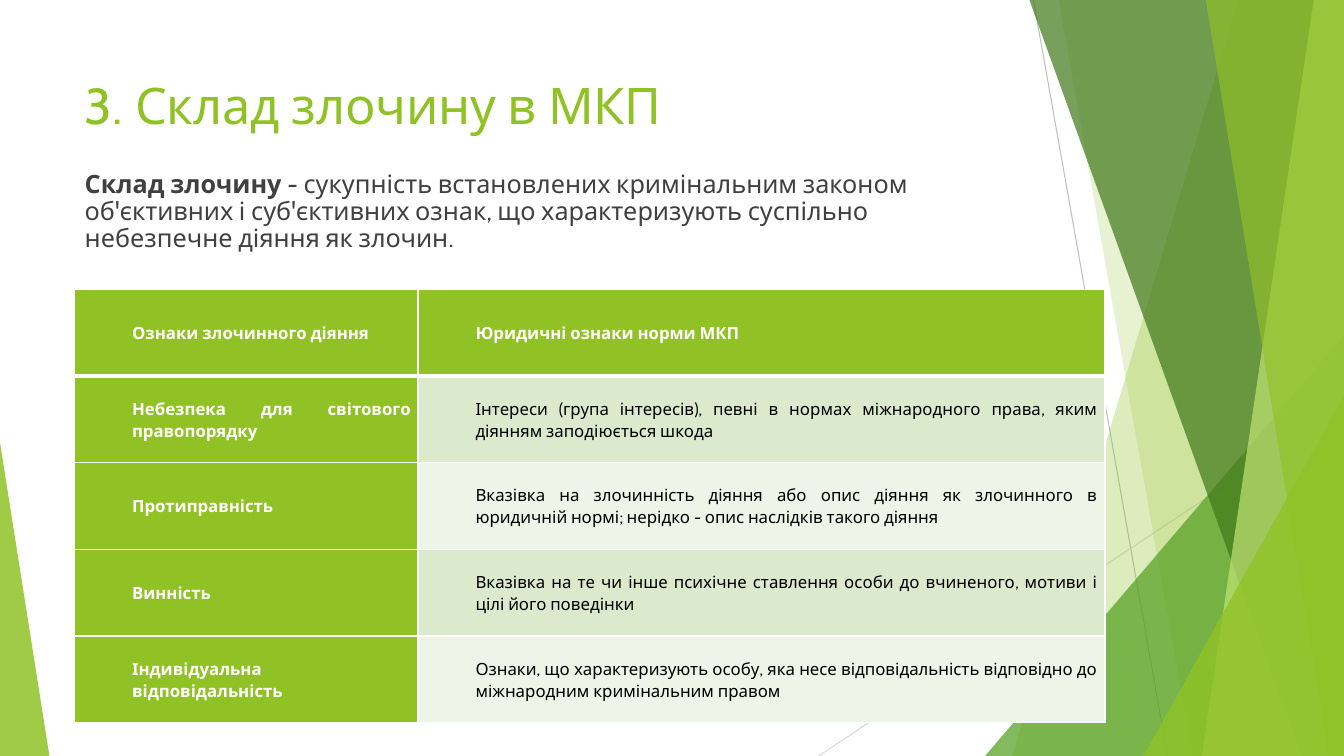
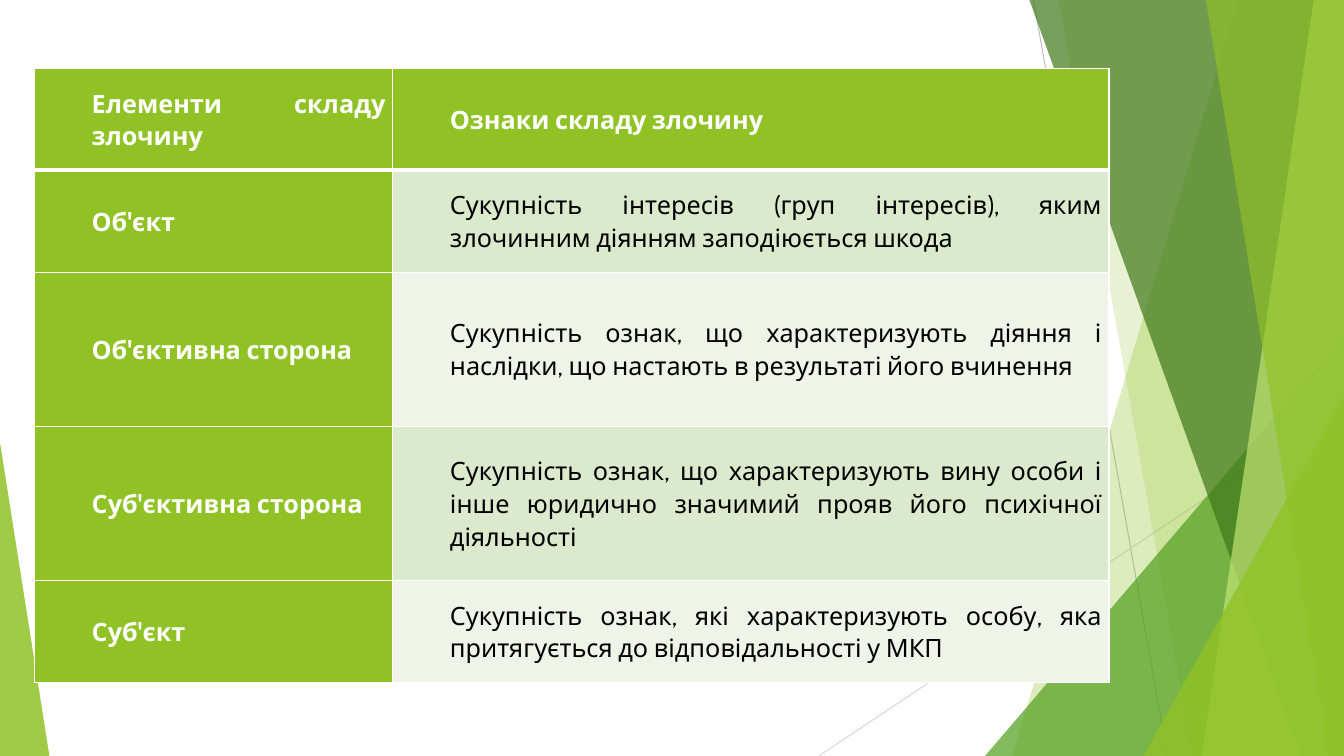
"""Build two slides on the elements of a crime in international criminal law."""
from dataclasses import dataclass

from lxml import etree
from pptx import Presentation
from pptx.dml.color import RGBColor
from pptx.enum.shapes import MSO_CONNECTOR, MSO_SHAPE
from pptx.enum.text import MSO_ANCHOR, MSO_AUTO_SIZE, PP_ALIGN
from pptx.oxml.ns import qn
from pptx.util import Inches, Pt

STRAIGHT = MSO_CONNECTOR.STRAIGHT
TRIANGLE = MSO_SHAPE.ISOSCELES_TRIANGLE
TOP, MIDDLE = MSO_ANCHOR.TOP, MSO_ANCHOR.MIDDLE
LEFT, JUSTIFY = PP_ALIGN.LEFT, PP_ALIGN.JUSTIFY
NO_FIT = MSO_AUTO_SIZE.NONE

LIME = RGBColor(0x90, 0xC2, 0x26)
PALE_LIME = RGBColor(0xC0, 0xE4, 0x74)
GREEN = RGBColor(0x54, 0xA0, 0x21)
DARK_GREEN = RGBColor(0x3F, 0x78, 0x19)
ROW_TINTS = (RGBColor(0xDB, 0xE9, 0xCD), RGBColor(0xEE, 0xF4, 0xE8))
GRAY = RGBColor(0xBF, 0xBF, 0xBF)
LIGHT_GRAY = RGBColor(0xD9, 0xD9, 0xD9)
TEXT_GRAY = RGBColor(0x40, 0x40, 0x40)
WHITE = RGBColor(0xFF, 0xFF, 0xFF)
BLACK = RGBColor(0, 0, 0)

FONT = "Cabin"
WIDTH, HEIGHT = 13.33, 7.5
TITLE_LAYOUT, BLANK_LAYOUT = 1, 6


@dataclass(frozen=True)
class Ray:
    """Thin straight line of the backdrop."""
    start: tuple[float, float]
    end: tuple[float, float]
    color: RGBColor


@dataclass(frozen=True)
class Band:
    """Full-height band from a slanted edge to the right side of the slide."""
    top_x: float
    bottom_x: float
    color: RGBColor
    opacity: int


@dataclass(frozen=True)
class Wedge:
    """Right triangle standing on the bottom of the slide."""
    left: float
    width: float
    height: float
    apex: float
    color: RGBColor
    opacity: int


@dataclass(frozen=True)
class Grid:
    """Two-column table with a header row."""
    left: float
    top: float
    width: float
    row_heights: tuple[float, ...]
    size: int
    rows: tuple[tuple[str, str], ...]


BACKDROP = (
    Ray((10.25, 0), (11.58, HEIGHT), GRAY),
    Ray((WIDTH, 4.03), (8.12, HEIGHT), LIGHT_GRAY),
    Band(12.28, 10.04, LIME, 30),
    Band(10.5, 11.83, LIME, 20),
    Wedge(9.77, 3.56, 4.17, 1, GREEN, 72),
    Band(10.21, 12.91, DARK_GREEN, 70),
    Band(13.03, 11.92, PALE_LIME, 70),
    Band(11.96, 13.18, LIME, 65),
    Wedge(11.34, 1.99, 3.57, 1, LIME, 80),
    Wedge(0, 0.49, 3.11, 0, LIME, 85),
)

FEATURES = Grid(0.74, 2.87, 10.22, (0.86,) * 5, 12, (
    ("Ознаки злочинного діяння", "Юридичні ознаки норми МКП"),
    ("Небезпека для світового правопорядку",
     "Інтереси (група інтересів), певні в нормах міжнародного права, яким діянням "
     "заподіюється шкода"),
    ("Протиправність",
     "Вказівка на злочинність діяння або опис діяння як злочинного в юридичній нормі; "
     "нерідко - опис наслідків такого діяння"),
    ("Винність",
     "Вказівка на те чи інше психічне ставлення особи до вчиненого, мотиви і цілі "
     "його поведінки"),
    ("Індивідуальна відповідальність",
     "Ознаки, що характеризують особу, яка несе відповідальність відповідно до "
     "міжнародним кримінальним правом"),
))

ELEMENTS = Grid(0.34, 0.68, 10.66, (1.01, 1.01, 1.53, 1.53, 1.01), 18, (
    ("Елементи складу злочину", "Ознаки складу злочину"),
    ("Об'єкт",
     "Сукупність інтересів (груп інтересів), яким злочинним діянням заподіюється шкода"),
    ("Об'єктивна сторона",
     "Сукупність ознак, що характеризують діяння і наслідки, що настають в результаті "
     "його вчинення"),
    ("Суб'єктивна сторона",
     "Сукупність ознак, що характеризують вину особи і інше юридично значимий прояв "
     "його психічної діяльності"),
    ("Суб'єкт",
     "Сукупність ознак, які характеризують особу, яка притягується до відповідальності "
     "у МКП"),
))


def format_run(r, size: float, color: RGBColor, bold: bool = False) -> None:
    """Apply the deck font to a run."""
    r.font.name = FONT
    r.font.size = Pt(size)
    r.font.color.rgb = color
    r.font.bold = bold


def paint(sp, color: RGBColor, opacity: int) -> None:
    """Give a shape a translucent fill without outline or shadow."""
    sp.shadow.inherit = False
    sp.line.fill.background()
    sp.fill.solid()
    sp.fill.fore_color.rgb = color
    clr = sp.element.spPr.find(f"{qn('a:solidFill')}/{qn('a:srgbClr')}")
    etree.SubElement(clr, qn("a:alpha"), val=str(opacity * 1000))


def draw_ray(shapes, ray: Ray) -> None:
    """Draw one thin line."""
    cxn = shapes.add_connector(STRAIGHT, *map(Inches, ray.start + ray.end))
    cxn.line.color.rgb = ray.color
    cxn.line.width = Pt(0.75)
    etree.SubElement(cxn.element.spPr, qn("a:effectLst"))


def draw_band(shapes, band: Band) -> None:
    """Draw one slanted band."""
    outline = shapes.build_freeform(Inches(band.top_x), 0)
    corners = ((WIDTH, 0), (WIDTH, HEIGHT), (band.bottom_x, HEIGHT))
    outline.add_line_segments([(Inches(x), Inches(y)) for x, y in corners])
    paint(outline.convert_to_shape(), band.color, band.opacity)


def draw_wedge(shapes, wedge: Wedge) -> None:
    """Draw one right triangle."""
    sp = shapes.add_shape(TRIANGLE, Inches(wedge.left), Inches(HEIGHT - wedge.height),
                          Inches(wedge.width), Inches(wedge.height))
    sp.adjustments[0] = wedge.apex
    paint(sp, wedge.color, wedge.opacity)


def add_backdrop(prs, slide) -> None:
    """Draw the backdrop as a group and move it to the slide master."""
    painters = {Ray: draw_ray, Band: draw_band, Wedge: draw_wedge}
    group = slide.shapes.add_group_shape()
    for part in BACKDROP:
        painters[type(part)](group.shapes, part)
    for number, props in enumerate(group.element.iter(qn("p:cNvPr")), start=100):
        props.set("id", str(number))
    prs.slide_master.shapes.element.insert(2, group.element)


def place_text(sp, top: float, height: float, anchor, text: str):
    """Place a text placeholder and return its left-aligned paragraph."""
    sp.left, sp.top = Inches(0.74), Inches(top)
    sp.width, sp.height = Inches(9.4), Inches(height)
    tf = sp.text_frame
    tf.text = text
    tf.word_wrap = True
    tf.auto_size = NO_FIT
    tf.vertical_anchor = anchor
    p = tf.paragraphs[0]
    p.alignment = LEFT
    p.line_spacing = 0.9
    return p


def add_title(slide, text: str) -> None:
    """Fill the title, with a tab stop after its number."""
    p = place_text(slide.shapes.title, 0.67, 0.8, MIDDLE, text)
    format_run(p.runs[0], 36, LIME)
    tabs = etree.SubElement(p._p.get_or_add_pPr(), qn("a:tabLst"))
    etree.SubElement(tabs, qn("a:tab"), pos=str(Inches(0.5)), algn="l")


def add_definition(slide, term: str, meaning: str) -> None:
    """Fill the body with a bold term and its meaning."""
    p = place_text(slide.placeholders[1], 1.65, 4.95, TOP, term)
    p.space_before = Pt(10)
    p.add_run().text = meaning
    for r, bold in zip(p.runs, (True, False)):
        format_run(r, 18, TEXT_GRAY, bold)
    pPr = p._p.get_or_add_pPr()
    pPr.set("marL", "0")
    pPr.set("indent", "0")
    etree.SubElement(pPr, qn("a:buNone"))


def set_borders(cell, top: float, bottom: float) -> None:
    """Draw white cell borders, 1 pt at the sides."""
    tcPr = cell._tc.get_or_add_tcPr()
    widths = {"a:lnL": 1, "a:lnR": 1, "a:lnT": top, "a:lnB": bottom}
    for i, (side, width) in enumerate(widths.items()):
        ln = etree.Element(qn(side), w=str(Pt(width)))
        fill = etree.SubElement(ln, qn("a:solidFill"))
        etree.SubElement(fill, qn("a:srgbClr"), val=str(WHITE))
        tcPr.insert(i, ln)


def fill_cell(cell, text: str, size: int, row: int, col: int) -> None:
    """Write and format one table cell."""
    heading = row == 0 or col == 0
    cell.text = text
    cell.vertical_anchor = MIDDLE
    cell.margin_left = cell.margin_right = Inches(0.07)
    cell.margin_top = cell.margin_bottom = 0
    cell.fill.solid()
    cell.fill.fore_color.rgb = LIME if heading else ROW_TINTS[(row - 1) % 2]
    set_borders(cell, 3 if row == 1 else 1, 3 if row == 0 else 1)
    p = cell.text_frame.paragraphs[0]
    p.alignment = JUSTIFY
    p.line_spacing = 1.07
    p._p.get_or_add_pPr().set("marL", str(Inches(0.5)))
    format_run(p.runs[0], size, WHITE if heading else BLACK, heading)


def add_grid(slide, grid: Grid) -> None:
    """Add a table whose second column is twice as wide as the first."""
    frame = slide.shapes.add_table(len(grid.rows), 2, Inches(grid.left), Inches(grid.top),
                                   Inches(grid.width), Inches(sum(grid.row_heights)))
    table = frame.table
    for col, share in enumerate((1, 2)):
        table.columns[col].width = Inches(grid.width * share / 3)
    for row, (height, texts) in enumerate(zip(grid.row_heights, grid.rows)):
        table.rows[row].height = Inches(height)
        for col, text in enumerate(texts):
            fill_cell(table.cell(row, col), text, grid.size, row, col)


def main() -> None:
    """Build and save the deck."""
    prs = Presentation()
    prs.slide_width, prs.slide_height = Inches(WIDTH), Inches(HEIGHT)

    slide = prs.slides.add_slide(prs.slide_layouts[TITLE_LAYOUT])
    add_backdrop(prs, slide)
    add_title(slide, "3.\tСклад злочину в МКП")
    add_definition(slide, "Склад злочину ",
                   "- сукупність встановлених кримінальним законом об'єктивних і "
                   "суб'єктивних ознак, що характеризують суспільно небезпечне діяння "
                   "як злочин.")
    add_grid(slide, FEATURES)

    slide = prs.slides.add_slide(prs.slide_layouts[BLANK_LAYOUT])
    add_grid(slide, ELEMENTS)

    prs.save("out.pptx")


if __name__ == "__main__":
    main()
